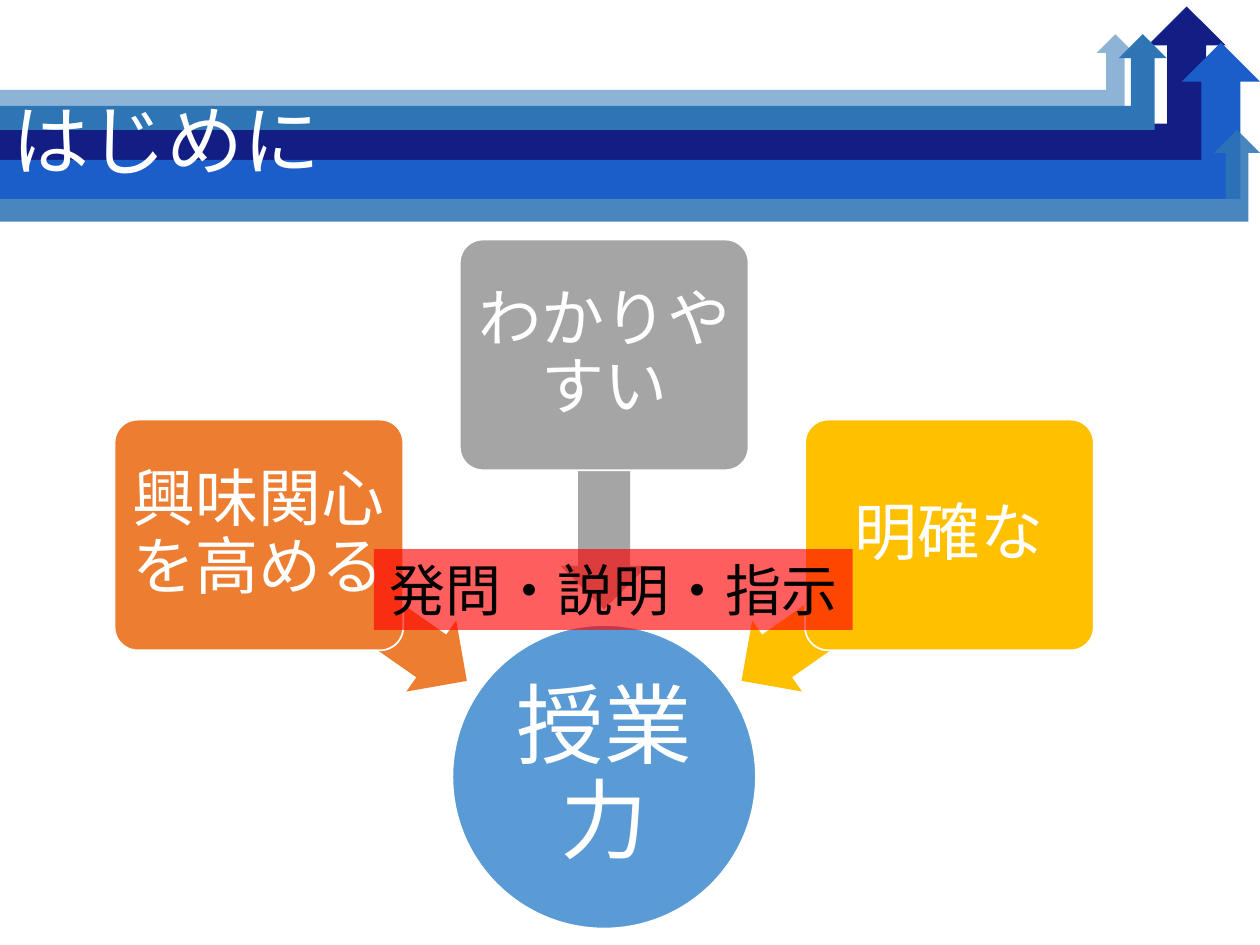
from dataclasses import dataclass

from lxml.etree import SubElement
from pptx import Presentation
from pptx.dml.color import RGBColor
from pptx.enum.shapes import MSO_SHAPE as Kind
from pptx.enum.text import MSO_ANCHOR, MSO_AUTO_SIZE, PP_ALIGN
from pptx.oxml.ns import qn
from pptx.util import Cm, Pt


@dataclass(frozen=True)
class Theme:
    white: str = "FFFFFF"
    black: str = "000000"
    navy: str = "131E85"
    blue: str = "1B5DC9"
    steel: str = "2E75B6"
    sky: str = "5B9BD5"
    orange: str = "ED7D31"
    gray: str = "A5A5A5"
    gold: str = "FFC000"
    red: str = "FF0000"
    latin: str = "Calibri"
    kanji: str = "Noto Sans CJK JP"
    title: int = 44
    core: int = 50
    box: int = 36
    band: int = 32


class Deck:
    def __init__(self, theme, slide):
        self.theme = theme
        self.slide = slide

    def shape(self, kind, spot, color, alpha=100, adjust=(), turn=0, edge=False):
        item = self.slide.shapes.add_shape(kind, *map(Cm, spot))
        item.shadow.inherit = False
        item.rotation = turn
        for i, value in enumerate(adjust):
            item.adjustments[i] = value
        item.fill.solid()
        item.fill.fore_color.rgb = RGBColor.from_string(color)
        if alpha < 100:
            tint = item.fill._xPr.find(".//" + qn("a:srgbClr"))
            SubElement(tint, qn("a:alpha")).set("val", str(alpha * 1000))
        if edge:
            item.line.color.rgb = RGBColor.from_string(self.theme.white)
            item.line.width = Pt(1)
        else:
            item.line.fill.background()
        return item

    def label(self, item, text, size, font, color, align=PP_ALIGN.CENTER,
              space=0.9, inset=None):
        frame = item.text_frame
        frame.word_wrap = True
        frame.vertical_anchor = MSO_ANCHOR.MIDDLE
        if inset is not None:
            frame.margin_left = frame.margin_right = Cm(inset)
            frame.margin_top = frame.margin_bottom = Cm(inset)
        para = frame.paragraphs[0]
        para.alignment = align
        para.line_spacing = space
        run = para.add_run()
        run.text = text
        run.font.size = Pt(size)
        run.font.color.rgb = RGBColor.from_string(color)
        run.font.name = font
        SubElement(run.font._element, qn("a:ea")).set("typeface", font)
        return frame

    def title(self, spot, text):
        item = self.slide.shapes.add_textbox(*map(Cm, spot))
        look = self.theme
        self.label(item, text, look.title, look.kanji, look.white, PP_ALIGN.LEFT)

    def card(self, kind, spot, color, text, size, inset, adjust=()):
        item = self.shape(kind, spot, color, adjust=adjust, edge=True)
        self.label(item, text, size, self.theme.latin, self.theme.white, inset=inset)

    def band(self, spot, text):
        look = self.theme
        item = self.shape(Kind.RECTANGLE, spot, look.red, alpha=63)
        frame = self.label(item, text, look.band, look.kanji, look.black, space=1.0)
        frame.auto_size = MSO_AUTO_SIZE.SHAPE_TO_FIT_TEXT


def main():
    look = Theme()
    show = Presentation()
    show.slide_width, show.slide_height = Cm(25.4), Cm(19.05)
    deck = Deck(look, show.slides.add_slide(show.slide_layouts[6]))

    # Header of bent arrows: top, width, height, colour, opacity
    for top, width, height, color, alpha in (
        (0.13, 24.71, 3.15, look.navy, 100),
        (0.86, 25.4, 3.15, look.blue, 100),
        (0.69, 23.52, 1.93, look.steel, 100),
        (0.69, 22.86, 1.5, look.steel, 54),
        (2.62, 25.4, 1.85, look.steel, 87),
    ):
        deck.shape(Kind.BENT_UP_ARROW, (0, top, width, height), color, alpha)
    deck.title((0, 1.14, 29.49, 3.53), "はじめに")

    # Goal in the centre
    mid, ring = 12.18, 6.12
    deck.card(Kind.OVAL, (mid - ring / 2, 12.6, ring, ring), look.sky,
              "授業力", look.core, 0.08)

    # Three factors, each with an arrow to the goal
    wide, high = 5.82, 4.65
    long, thick = 5.13, 1.75
    for side, top, tip, turn, color, text in (
        (-1, 8.46, 11.38, 215, look.orange, "興味関心を高める"),
        (0, 4.83, 8.84, 270, look.gray, "わかりやすい"),
        (1, 8.46, 11.38, 325, look.gold, "明確な"),
    ):
        left = mid + side * 4.87 - long / 2
        deck.shape(Kind.LEFT_ARROW, (left, tip, long, thick), color,
                   adjust=(0.6, 0.5), turn=turn)
        left = mid + side * 6.96 - wide / 2
        deck.card(Kind.ROUNDED_RECTANGLE, (left, top, wide, high), color,
                  text, look.box, 0.18, adjust=(0.1,))

    # Band over the factors
    deck.band((7.54, 11.07, 9.65, 1.63), "発問・説明・指示")

    show.save("out.pptx")


if __name__ == "__main__":
    main()
